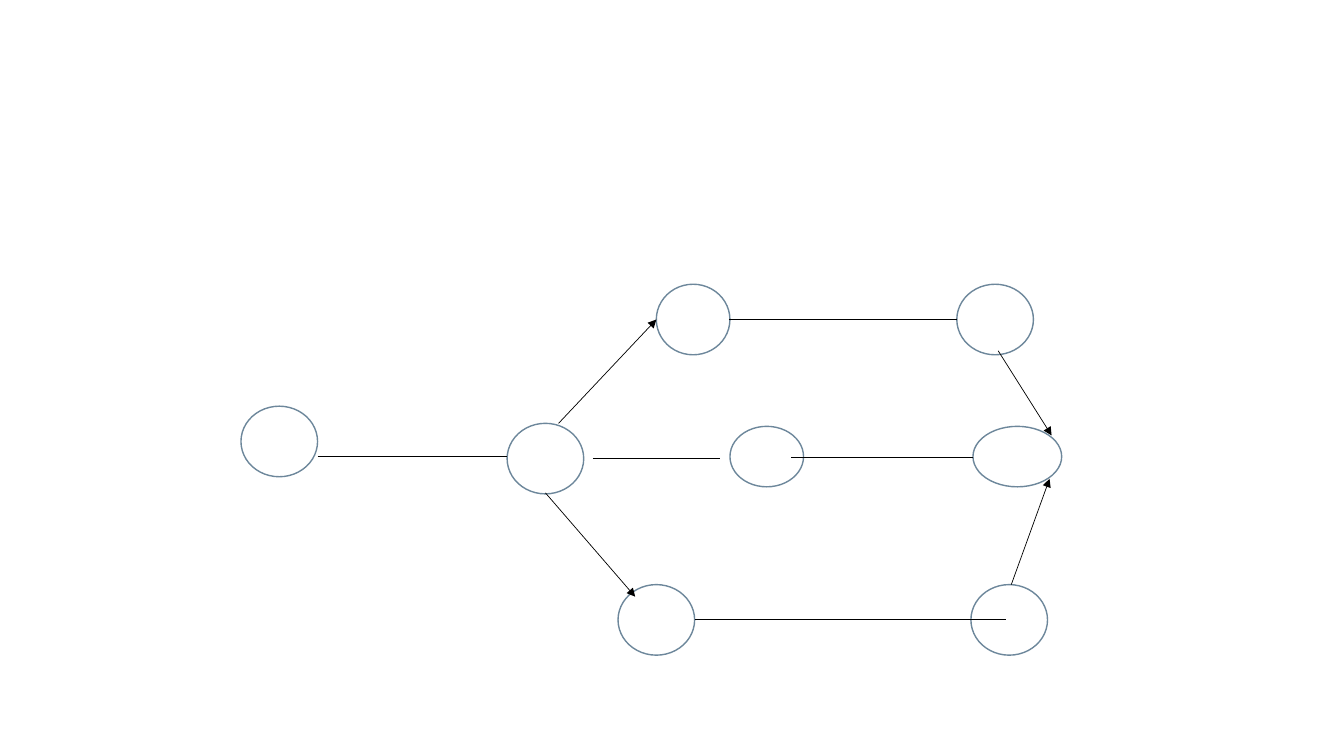
from dataclasses import dataclass

from lxml.etree import SubElement
from pptx import Presentation
from pptx.dml.color import RGBColor
from pptx.enum.shapes import MSO_CONNECTOR as CONN, MSO_SHAPE as SHAPE
from pptx.oxml.ns import qn
from pptx.util import Inches, Pt


@dataclass(frozen=True)
class Theme:
    node: RGBColor = RGBColor(0x6D, 0x87, 0x9B)
    edge: RGBColor = RGBColor(0, 0, 0)
    node_width: float = 1
    edge_width: float = 0.5
    bold_width: float = 1


THEME = Theme()

# left, top, width, height
NODES = [
    (2.39, 4.03, 0.76, 0.7),
    (5.03, 4.2, 0.76, 0.7),
    (6.51, 2.82, 0.73, 0.7),
    (9.49, 2.82, 0.76, 0.7),
    (7.24, 4.23, 0.73, 0.6),
    (9.65, 4.23, 0.88, 0.6),
    (6.13, 5.8, 0.76, 0.7),
    (9.63, 5.8, 0.76, 0.7),
]
# x1, y1, x2, y2
LINKS = [
    (3.15, 4.53, 5.03, 4.53),
    (7.85, 4.54, 9.65, 4.54),
    (7.23, 3.17, 9.49, 3.17),
    (6.89, 6.14, 9.98, 6.14),
]
BOLD_LINK = (5.88, 4.55, 7.14, 4.55)
ARROWS = [
    (5.54, 4.2, 6.51, 3.17),
    (5.41, 4.89, 6.3, 5.92),
    (9.9, 3.48, 10.43, 4.32),
    (10.03, 5.8, 10.41, 4.75),
]


def set_line(line, color, width):
    line.color.rgb = color
    line.width = Pt(width)


def add_node(s, box):
    node = s.shapes.add_shape(SHAPE.OVAL, *map(Inches, box))
    node.shadow.inherit = False
    node.fill.background()
    set_line(node.line, THEME.node, THEME.node_width)


def add_edge(s, ends, width=THEME.edge_width, arrow=False):
    edge = s.shapes.add_connector(CONN.STRAIGHT, *map(Inches, ends))
    set_line(edge.line, THEME.edge, width)
    if arrow:
        SubElement(edge.line._get_or_add_ln(), qn("a:tailEnd"), type="triangle")
    SubElement(edge._element.spPr, qn("a:effectLst"))


def main():
    prs = Presentation()
    prs.slide_width, prs.slide_height = Inches(13.33), Inches(7.5)
    s = prs.slides.add_slide(prs.slide_layouts[6])
    for box in NODES:
        add_node(s, box)
    for ends in LINKS:
        add_edge(s, ends)
    add_edge(s, BOLD_LINK, width=THEME.bold_width)
    for ends in ARROWS:
        add_edge(s, ends, arrow=True)
    prs.save("out.pptx")


if __name__ == "__main__":
    main()
